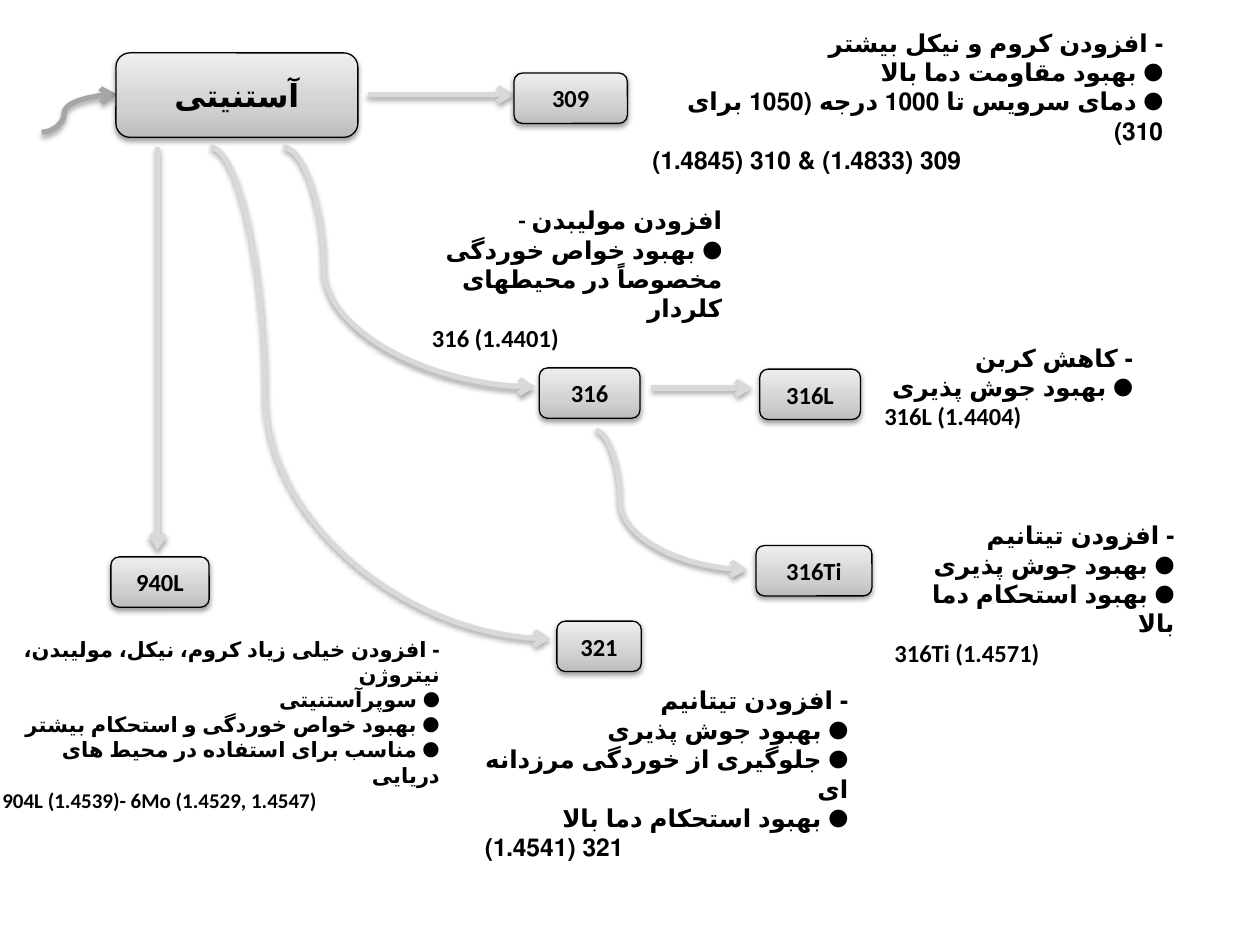
from lxml.etree import SubElement
from copy import deepcopy
from pptx import Presentation
from pptx.dml.color import RGBColor
from pptx.enum.lang import MSO_LANGUAGE_ID as Language
from pptx.enum.shapes import MSO_CONNECTOR as Link, MSO_SHAPE as Shape
from pptx.enum.text import MSO_ANCHOR as Anchor, MSO_AUTO_SIZE as AutoSize, PP_ALIGN as Align
from pptx.oxml.ns import qn
from pptx.util import Inches, Pt

COLORS = {"ink": "000000", "arrow": "D9D9D9", "entry": "A6A6A6",
          "low": "BDBDBD", "middle": "D1D1D1", "high": "EEEEEE"}
FONT = "Calibri"

GRADES = [
    ("آستنیتی", 0.92, 0.42, 1.92, 0.67, 18),
    ("309", 4.08, 0.58, 0.9, 0.4, 14),
    ("316", 4.28, 2.92, 0.8, 0.4, 14),
    ("940L", 0.88, 4.42, 0.78, 0.4, 14),
    ("321", 4.42, 4.93, 0.67, 0.4, 14),
    ("316L", 6.03, 2.93, 0.8, 0.4, 14),
    ("316Ti", 6, 4.33, 0.92, 0.4, 14),
]

STRAIGHT_ARROWS = [
    (2.92, 0.75, 4.08, 0.75),
    (1.25, 1.17, 1.25, 4.37),
    (5.17, 3.08, 5.97, 3.08),
]

CURVED_ARROWS = [
    (2.25, 1.17, 4.25, 3.07),
    (1.67, 1.17, 4.37, 5.07),
    (4.73, 3.42, 5.93, 4.52),
]

NOTES = [
    ((5.08, 0.17, 4.25, 1.04), 14,
     ["- افزودن کروم و نیکل بیشتر", "● بهبود مقاومت دما بالا",
      "● دمای سرویس تا 1000 درجه (1050 برای 310)"],
     "309 (1.4833) & 310 (1.4845)"),
    ((3.33, 1.58, 2.5, 1.04), 14,
     ["- افزودن مولیبدن", "● بهبود خواص خوردگی مخصوصاً در محیطهای کلردار"],
     "316 (1.4401)"),
    ((6.92, 2.67, 2.17, 0.81), 14,
     ["- کاهش کربن", "● بهبود جوش پذیری"],
     "316L (1.4404)"),
    ((7, 4.08, 2.42, 1.04), 14,
     ["- افزودن تیتانیم", "● بهبود جوش پذیری", "● بهبود استحکام دما بالا"],
     "316Ti (1.4571)"),
    ((3.75, 5.39, 3.08, 1.28), 14,
     ["- افزودن تیتانیم", "● بهبود جوش پذیری",
      "● جلوگیری از خوردگی مرزدانه ای", "● بهبود استحکام دما بالا"],
     "321 (1.4541)"),
    ((-0.08, 5, 3.67, 1.31), 12,
     ["- افزودن خیلی زیاد کروم، نیکل، مولیبدن، نیتروژن", "● سوپرآستنیتی",
      "● بهبود خواص خوردگی و استحکام بیشتر",
      "● مناسب برای استفاده در محیط های دریایی"],
     "904L (1.4539)- 6Mo (1.4529, 1.4547)"),
]
LEFT_TO_RIGHT = {"- افزودن مولیبدن", "316 (1.4401)", "316L (1.4404)"}


def color(name):
    """Return the named colour."""
    return RGBColor.from_string(COLORS[name])


def add_shadow(shape, distance, opacity):
    """Give a shape or connector a soft shadow below it."""
    effects = SubElement(shape._element.spPr, qn("a:effectLst"))
    outer = SubElement(effects, qn("a:outerShdw"), blurRad=str(Pt(3.1)),
                       dist=str(Pt(distance)), dir="5400000", rotWithShape="0")
    tint = SubElement(outer, qn("a:srgbClr"), val=COLORS["ink"])
    SubElement(tint, qn("a:alpha"), val=str(opacity * 1000))


def add_span(para, text, size):
    """Add one bold run of Persian text."""
    span = para.add_run()
    span.text = text
    span.font.name = FONT
    span.font.language_id = Language.FARSI
    span.font.size = Pt(size)
    span.font.bold = True
    span.font.color.rgb = color("ink")


def fill_gradient(shape):
    """Fill a shape with grey that lightens upwards."""
    shape.fill.gradient()
    shape.fill.gradient_angle = 90
    stop_list = shape._element.spPr.find(qn("a:gradFill")).find(qn("a:gsLst"))
    stop_list.append(deepcopy(stop_list[0]))
    steps = [(0, "low"), (0.35, "middle"), (1, "high")]
    for stop, (position, name) in zip(shape.fill.gradient_stops, steps):
        stop.position = position
        stop.color.rgb = color(name)


def add_grade(page, text, left, top, width, height, size):
    """Add a rounded box that names a steel grade."""
    box = page.shapes.add_shape(Shape.ROUNDED_RECTANGLE, Inches(left), Inches(top),
                                Inches(width), Inches(height))
    fill_gradient(box)
    box.line.color.rgb = color("ink")
    box.line.width = Pt(0.75)
    add_shadow(box, 1.6, 38)
    box.text_frame.vertical_anchor = Anchor.MIDDLE
    para = box.text_frame.paragraphs[0]
    para.alignment = Align.CENTER
    add_span(para, text, size)


def add_arrow(page, ends, bend=None, tone="arrow"):
    """Add an arrow, curved when a bend is given."""
    kind = Link.STRAIGHT if bend is None else Link.CURVE
    arrow = page.shapes.add_connector(kind, *[Inches(value) for value in ends])
    arrow.line.color.rgb = color(tone)
    arrow.line.width = Pt(3)
    SubElement(arrow.line._get_or_add_ln(), qn("a:tailEnd"), type="arrow")
    if bend is not None:
        guides = arrow._element.spPr.find(qn("a:prstGeom")).find(qn("a:avLst"))
        SubElement(guides, qn("a:gd"), name="adj1", fmla=f"val {round(bend * 100000)}")
    add_shadow(arrow, 1.8, 35)


def add_note(page, place, size, effects, code):
    """Add the effects of an alloying step and its grade number."""
    box = page.shapes.add_textbox(*[Inches(value) for value in place])
    frame = box.text_frame
    frame.word_wrap = True
    frame.auto_size = AutoSize.SHAPE_TO_FIT_TEXT
    for index, text in enumerate([*effects, code]):
        para = frame.add_paragraph() if index else frame.paragraphs[0]
        para.alignment = Align.LEFT if text == code else Align.RIGHT
        if text not in LEFT_TO_RIGHT:
            para._p.get_or_add_pPr().set("rtl", "1")
        add_span(para, text, size)


def main():
    """Build the slide on austenitic steels."""
    deck = Presentation()
    deck.slide_width, deck.slide_height = Inches(10), Inches(7.5)
    page = deck.slides.add_slide(deck.slide_layouts[6])
    add_arrow(page, (0.33, 1.05, 0.93, 0.75), 0.3, "entry")
    for ends in STRAIGHT_ARROWS:
        add_arrow(page, ends)
    for ends in CURVED_ARROWS:
        add_arrow(page, ends, 0.16)
    for grade in GRADES:
        add_grade(page, *grade)
    for note in NOTES:
        add_note(page, *note)
    deck.save("out.pptx")


if __name__ == "__main__":
    main()
